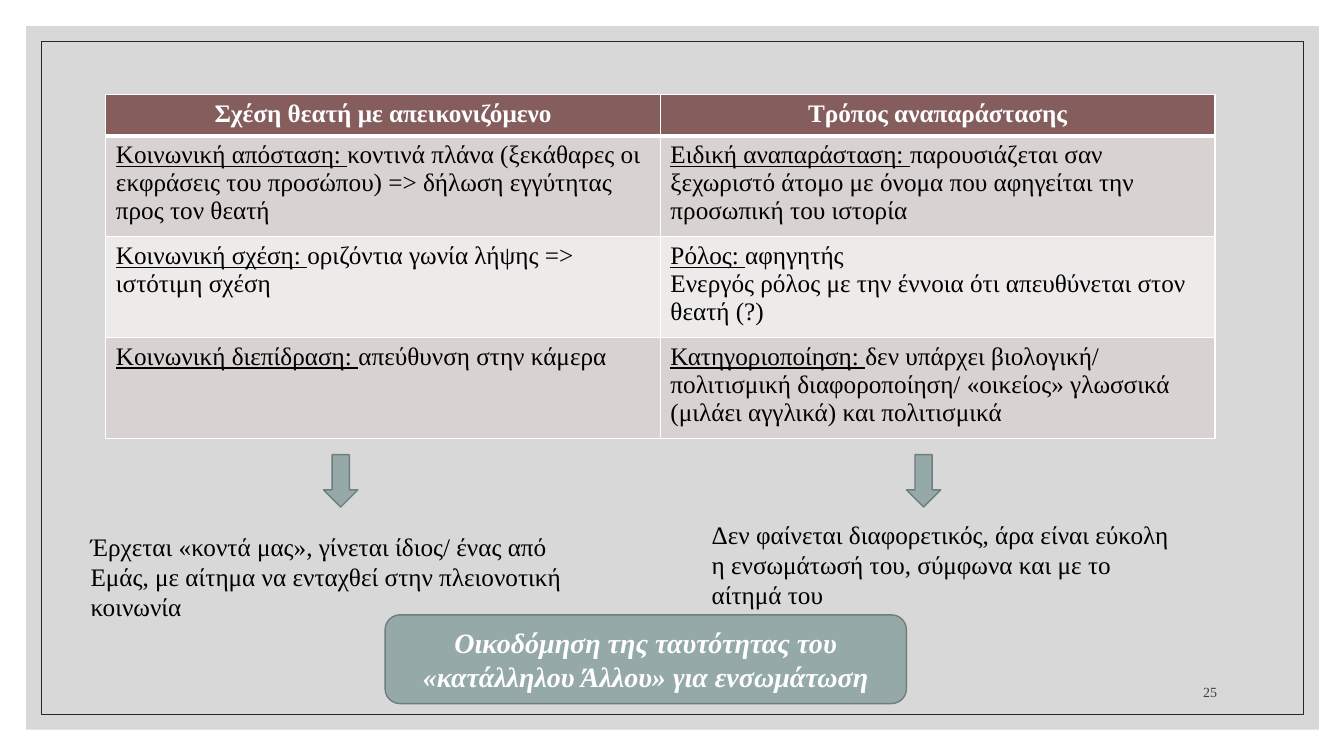
from dataclasses import dataclass

from lxml.etree import SubElement
from pptx import Presentation
from pptx.dml.color import RGBColor
from pptx.enum.shapes import MSO_SHAPE
from pptx.enum.text import MSO_ANCHOR, PP_ALIGN
from pptx.oxml.ns import qn
from pptx.util import Inches, Pt

HEADERS = ["Σχέση θεατή με απεικονιζόμενο", "Τρόπος αναπαράστασης"]
ROWS = [
    [
        [("Κοινωνική απόσταση: ", "κοντινά πλάνα (ξεκάθαρες οι εκφράσεις του προσώπου) => "
          "δήλωση εγγύτητας προς τον θεατή")],
        [("Ειδική αναπαράσταση: ", "παρουσιάζεται σαν ξεχωριστό άτομο με όνομα που αφηγείται "
          "την προσωπική του ιστορία")],
    ],
    [
        [("Κοινωνική σχέση: ", "οριζόντια γωνία λήψης => ιστότιμη σχέση")],
        [("Ρόλος: ", "αφηγητής"),
         ("", "Ενεργός ρόλος με την έννοια ότι απευθύνεται στον θεατή (?)")],
    ],
    [
        [("Κοινωνική διεπίδραση: ", "απεύθυνση στην κάμερα")],
        [("Κατηγοριοποίηση: ", "δεν υπάρχει βιολογική/ πολιτισμική διαφοροποίηση/ «οικείος» "
          "γλωσσικά (μιλάει αγγλικά) και πολιτισμικά")],
    ],
]
OUTCOMES = [
    ("Έρχεται «κοντά μας», γίνεται ίδιος/ ένας από Εμάς, με αίτημα να ενταχθεί στην "
     "πλειονοτική κοινωνία", 3.21, (0.8, 5.22, 5.17, 0.95)),
    ("Δεν φαίνεται διαφορετικός, άρα είναι εύκολη η ενσωμάτωσή του, σύμφωνα και με το "
     "αίτημά του", 8.99, (6.96, 5.1, 4.75, 0.95)),
]
CONCLUSION = ["Οικοδόμηση της ταυτότητας του", "«κατάλληλου Άλλου» για ενσωμάτωση"]
PAGE_NUMBER = "25"


@dataclass(frozen=True)
class Theme:
    font: str = "Times New Roman"
    body: int = 18
    callout: int = 20
    small: int = 10
    text: str = "000000"
    light: str = "FFFFFF"
    muted: str = "404040"
    panel: str = "BFBFBF"
    frame: str = "262626"
    header: str = "855D5D"
    bands: tuple = ("D9D2D2", "EDEAEA")
    accent: str = "96A9A9"
    accent_line: str = "6F7D7D"


THEME = Theme()


def write_text(text_frame, paragraphs, size=THEME.body, color=THEME.text, bold=False,
               italic=False, align=PP_ALIGN.LEFT, anchor=MSO_ANCHOR.TOP, spacing=None):
    text_frame.word_wrap = True
    text_frame.vertical_anchor = anchor
    for index, (label, content) in enumerate(paragraphs):
        paragraph = text_frame.add_paragraph() if index else text_frame.paragraphs[0]
        paragraph.alignment = align
        paragraph.line_spacing = spacing
        for text, underline in ((label, True), (content, False)):
            if text:
                run = paragraph.add_run()
                run.text = text
                font = run.font
                font.name, font.size = THEME.font, Pt(size)
                font.bold, font.italic, font.underline = bold, italic, underline
                font.color.rgb = RGBColor.from_string(color)


def add_box(slide, kind, box, fill=None, line=None, width=1.0):
    shape = slide.shapes.add_shape(kind, *map(Inches, box))
    shape.shadow.inherit = False
    if fill:
        shape.fill.solid()
        shape.fill.fore_color.rgb = RGBColor.from_string(fill)
    else:
        shape.fill.background()
    if line:
        shape.line.color.rgb = RGBColor.from_string(line)
        shape.line.width = Pt(width)
    else:
        shape.line.fill.background()
    return shape


def add_label(slide, box, text, **text_format):
    label = slide.shapes.add_textbox(*map(Inches, box))
    write_text(label.text_frame, [("", text)], **text_format)


def style_cell(cell, fill, border_widths):
    properties = cell._tc.get_or_add_tcPr()
    for side, width in border_widths.items():
        border = SubElement(properties, qn(f"a:ln{side}"), w=str(Pt(width)))
        color = SubElement(SubElement(border, qn("a:solidFill")), qn("a:srgbClr"))
        color.set("val", THEME.light)
    cell.fill.solid()
    cell.fill.fore_color.rgb = RGBColor.from_string(fill)


def add_backdrop(slide):
    panel = add_box(slide, MSO_SHAPE.RECTANGLE, (0.26, 0.26, 12.82, 6.98), THEME.panel)
    color = panel.fill._xPr.find(qn("a:solidFill")).find(qn("a:srgbClr"))
    SubElement(color, qn("a:alpha"), val="60000")
    add_box(slide, MSO_SHAPE.RECTANGLE, (0.41, 0.41, 12.52, 6.68), line=THEME.frame, width=0.5)


def add_comparison(slide):
    frame = slide.shapes.add_table(len(ROWS) + 1, len(HEADERS), Inches(1.05), Inches(0.94),
                                   Inches(11), Inches(3.41))
    table = frame.table
    table.horz_banding = False
    for row_index, row in enumerate(table.rows):
        is_header = row_index == 0
        row.height = Inches(0.41 if is_header else 1)
        fill = THEME.header if is_header else THEME.bands[(row_index - 1) % 2]
        borders = {"L": 1, "R": 1, "T": 3 if row_index == 1 else 1, "B": 3 if is_header else 1}
        for column_index, cell in enumerate(row.cells):
            style_cell(cell, fill, borders)
            if is_header:
                write_text(cell.text_frame, [("", HEADERS[column_index])], color=THEME.light,
                           bold=True, align=PP_ALIGN.CENTER)
            else:
                write_text(cell.text_frame, ROWS[row_index - 1][column_index])


def main():
    presentation = Presentation()
    presentation.slide_width = Inches(13.33)
    presentation.slide_height = Inches(7.5)
    slide = presentation.slides.add_slide(presentation.slide_layouts[6])
    add_backdrop(slide)
    add_comparison(slide)
    add_label(slide, (11.25, 6.6, 0.92, 0.4), PAGE_NUMBER, size=THEME.small, color=THEME.muted,
              align=PP_ALIGN.RIGHT, anchor=MSO_ANCHOR.BOTTOM)
    for text, arrow_left, text_box in OUTCOMES:
        add_box(slide, MSO_SHAPE.DOWN_ARROW, (arrow_left, 4.51, 0.34, 0.52),
                THEME.accent, THEME.accent_line)
        add_label(slide, text_box, text, spacing=Pt(21.5))
    callout = add_box(slide, MSO_SHAPE.ROUNDED_RECTANGLE, (3.82, 6.1, 5.17, 0.88),
                      THEME.accent, THEME.accent_line)
    write_text(callout.text_frame, [("", line) for line in CONCLUSION], size=THEME.callout,
               color=THEME.light, bold=True, italic=True, align=PP_ALIGN.CENTER,
               anchor=MSO_ANCHOR.MIDDLE, spacing=Pt(24.5))
    presentation.save("out.pptx")


if __name__ == "__main__":
    main()
